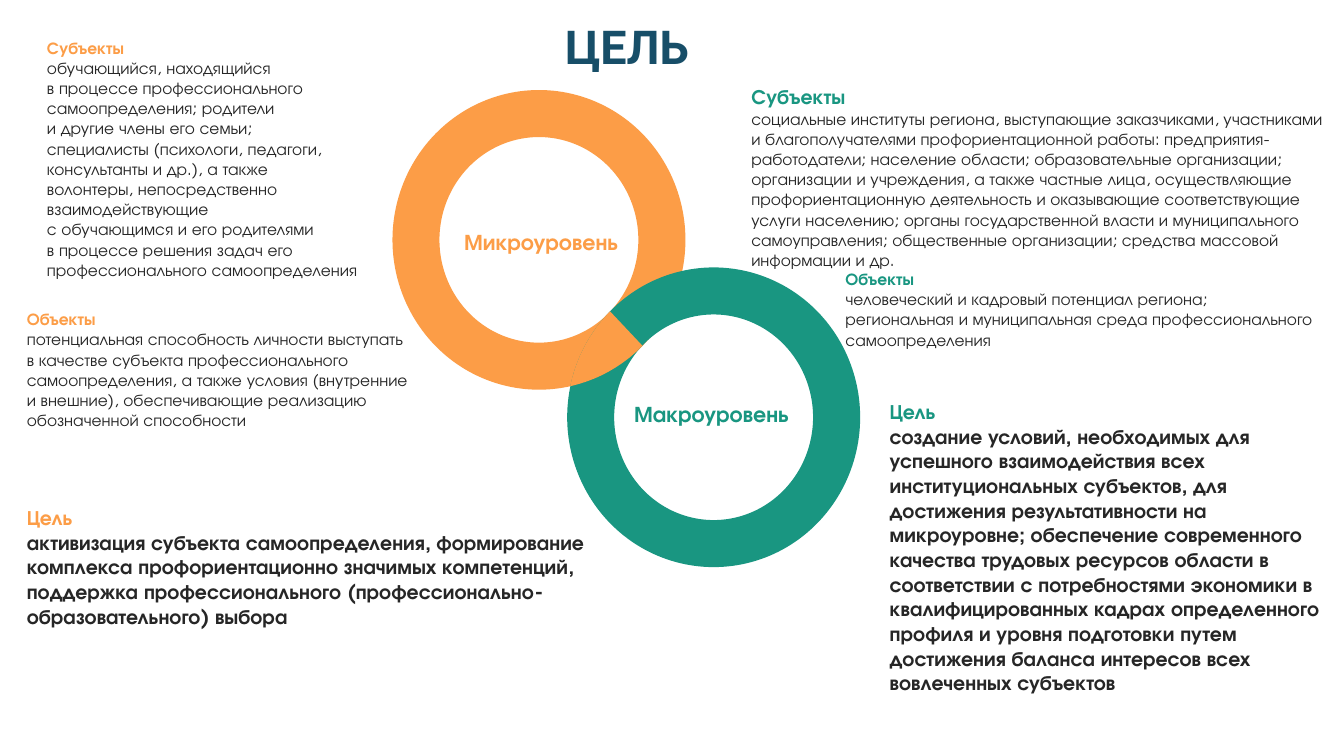
from math import cos, radians, sin

from pptx import Presentation
from pptx.dml.color import RGBColor
from pptx.enum.shapes import MSO_SHAPE as Shape
from pptx.enum.text import MSO_ANCHOR as Anchor, MSO_AUTO_SIZE as AutoSize, PP_ALIGN as Align
from pptx.util import Inches, Pt

ORANGE, GREEN, DARK, NAVY = "FC9D47", "199681", "262626", "174E68"
BODY_FONT, TITLE_FONT = "TeX Gyre Adventor", "Roboto"
PAGE_WIDTH = 10
PAGE_HEIGHT = PAGE_WIDTH * 9 / 16
RING_WIDTH, RING_HEIGHT, RING_BAND = 2.18, 2.23, 0.35
MICRO, MACRO = (2.92, 0.67), (4.22, 1.99)

RINGS = [(MICRO, ORANGE), (MACRO, GREEN)]
LABELS = [
    ("Макроуровень", (4.5, 2.93, 1.47, 0.3), GREEN),
    ("Микроуровень", (3.24, 1.65, 1.46, 0.3), ORANGE),
]
BLOCKS = [
    ((0.31, 0.25, 2.77, 1.86), ORANGE, "Субъекты", 9, 9, False, [
        "обучающийся, находящийся",
        "в процессе профессионального",
        "самоопределения; родители",
        "и другие члены его семьи;",
        "специалисты (психологи, педагоги,",
        "консультанты и др.), а также",
        "волонтеры, непосредственно",
        "взаимодействующие",
        "с обучающимся и его родителями",
        "в процессе решения задач его",
        "профессионального самоопределения",
    ]),
    ((0.16, 2.2, 2.96, 1.1), ORANGE, "Объекты", 9, 9, False, [
        "потенциальная способность личности выступать в качестве субъекта "
        "профессионального самоопределения, а также условия (внутренние и внешние), "
        "обеспечивающие реализацию обозначенной способности",
    ]),
    ((0.16, 3.64, 4.5, 1.15), ORANGE, "Цель", 11, 11, True, [
        "активизация субъекта самоопределения, формирование комплекса "
        "профориентационно значимых компетенций, поддержка профессионального "
        "(профессионально-образовательного) выбора",
    ]),
    ((5.55, 0.52, 4.41, 1.59), GREEN, "Субъекты", 11, 9, False, [
        "социальные институты региона, выступающие заказчиками, участниками и "
        "благополучателями профориентационной работы: предприятия-работодатели; "
        "население области; образовательные организации; организации и учреждения, "
        "а также частные лица, осуществляющие профориентационную деятельность и "
        "оказывающие соответствующие услуги населению; органы государственной власти "
        "и муниципального самоуправления; общественные организации; средства массовой "
        "информации и др.",
    ]),
    ((6.25, 1.98, 3.75, 0.64), GREEN, "Объекты", 9, 9, False, [
        "человеческий и кадровый потенциал региона;",
        "региональная и муниципальная среда профессионального самоопределения",
    ]),
    ((6.58, 2.85, 3.38, 2.44), GREEN, "Цель", 11, 11, True, [
        "создание условий, необходимых для успешного взаимодействия всех "
        "институциональных субъектов, для достижения результативности на микроуровне; "
        "обеспечение современного качества трудовых ресурсов области в соответствии с "
        "потребностями экономики в квалифицированных кадрах определенного профиля и "
        "уровня подготовки путем достижения баланса интересов всех вовлеченных субъектов",
    ]),
]


def color(value):
    return RGBColor.from_string(value)


def paint(shape, value):
    shape.shadow.inherit = False
    shape.fill.solid()
    shape.fill.fore_color.rgb = color(value)
    shape.line.fill.background()


def arc(corner, start, end):
    center_x = corner[0] + RING_WIDTH / 2
    center_y = corner[1] + RING_HEIGHT / 2
    steps = 20
    angles = [radians(start + (end - start) * i / steps) for i in range(steps + 1)]
    return [(Inches(center_x + RING_WIDTH / 2 * cos(a)),
             Inches(center_y + RING_HEIGHT / 2 * sin(a))) for a in angles]


def set_frame(box, anchor, wrap, margins):
    frame = box.text_frame
    frame.word_wrap = wrap
    frame.auto_size = AutoSize.SHAPE_TO_FIT_TEXT
    frame.vertical_anchor = anchor
    frame.margin_left = frame.margin_right = Inches(margins[0])
    frame.margin_top = frame.margin_bottom = Inches(margins[1])
    return frame


def write(para, text, size, value, bold, font=BODY_FONT, align=Align.LEFT):
    para.alignment = align
    span = para.add_run()
    span.text = text
    span.font.name = font
    span.font.size = Pt(size)
    span.font.bold = bold
    span.font.color.rgb = color(value)


def main():
    deck = Presentation()
    deck.slide_width, deck.slide_height = Inches(PAGE_WIDTH), Inches(PAGE_HEIGHT)
    page = deck.slides.add_slide(deck.slide_layouts[5])

    title = page.shapes.title
    title.left, title.top, title.width, title.height = map(Inches, (4.16, 0.11, 1.01, 0.46))
    frame = set_frame(title, Anchor.TOP, False, (0.04, 0.02))
    write(frame.paragraphs[0], "ЦЕЛЬ", 25, NAVY, True, TITLE_FONT, Align.CENTER)

    for corner, value in RINGS:
        ring = page.shapes.add_shape(
            Shape.DONUT, *map(Inches, (*corner, RING_WIDTH, RING_HEIGHT)))
        ring.adjustments[0] = RING_BAND / RING_WIDTH
        paint(ring, value)

    outline = arc(MICRO, 78, 45) + arc(MACRO, 225, 192)
    builder = page.shapes.build_freeform(*outline[0])
    builder.add_line_segments(outline[1:], close=True)
    paint(builder.convert_to_shape(), ORANGE)

    for text, place, value in LABELS:
        box = page.shapes.add_textbox(*map(Inches, place))
        frame = set_frame(box, Anchor.MIDDLE, False, (0.1, 0.05))
        write(frame.paragraphs[0], text, 12, value, True, align=Align.RIGHT)

    for place, value, heading, heading_size, size, bold, lines in BLOCKS:
        box = page.shapes.add_textbox(*map(Inches, place))
        frame = set_frame(box, Anchor.MIDDLE, True, (0.04, 0.02))
        write(frame.paragraphs[0], heading, heading_size, value, True)
        for line in lines:
            write(frame.add_paragraph(), line, size, DARK, bold)

    deck.save("out.pptx")


if __name__ == "__main__":
    main()
